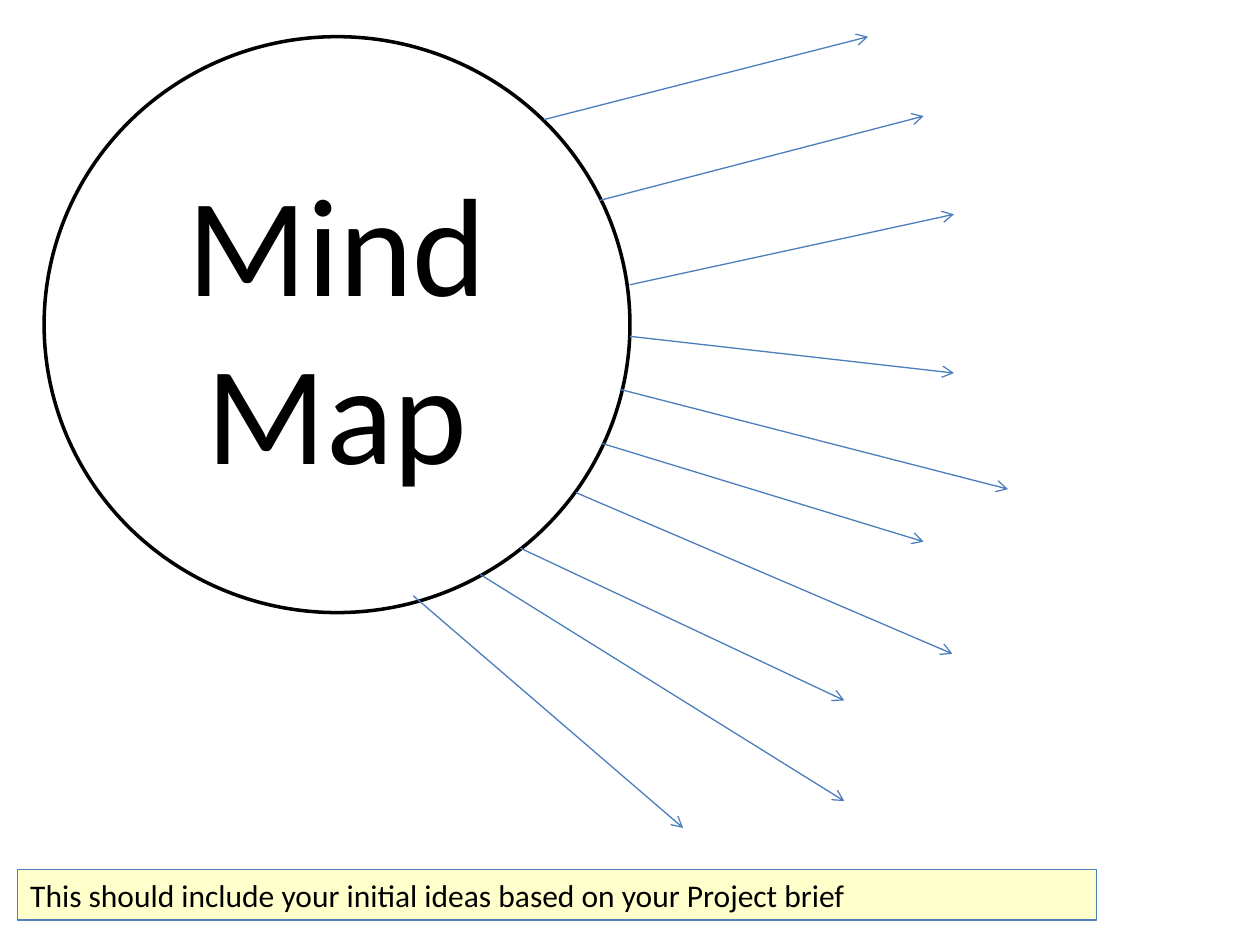
from dataclasses import dataclass
from typing import NamedTuple

from lxml.etree import SubElement
from pptx import Presentation
from pptx.dml.color import RGBColor
from pptx.enum.shapes import MSO_CONNECTOR, MSO_SHAPE
from pptx.enum.text import MSO_ANCHOR, MSO_AUTO_SIZE, PP_ALIGN
from pptx.oxml.ns import qn
from pptx.shapes.autoshape import Shape
from pptx.slide import Slide
from pptx.util import Cm, Pt


@dataclass(frozen=True)
class Theme:
    font: str = "Calibri"
    ink: RGBColor = RGBColor(0x00, 0x00, 0x00)
    paper: RGBColor = RGBColor(0xFF, 0xFF, 0xFF)
    ray: RGBColor = RGBColor(0x4B, 0x7E, 0xBC)
    note_fill: RGBColor = RGBColor(0xFF, 0xFF, 0xCC)
    note_border: RGBColor = RGBColor(0x4F, 0x81, 0xBD)
    topic_size: float = 80
    note_size: float = 18
    thick: float = 2
    thin: float = 0.75


class Ray(NamedTuple):
    x1: float
    y1: float
    x2: float
    y2: float


@dataclass(frozen=True)
class Panel:
    kind: MSO_SHAPE
    left: float
    top: float
    width: float
    height: float
    text: str
    size: float
    fill: RGBColor
    border: RGBColor
    border_width: float
    align: PP_ALIGN


THEME = Theme()

TOPIC = Panel(MSO_SHAPE.OVAL, 0.89, 0.74, 11.81, 11.61, "Mind Map",
              THEME.topic_size, THEME.paper, THEME.ink, THEME.thick, PP_ALIGN.CENTER)
NOTE = Panel(MSO_SHAPE.RECTANGLE, 0.36, 17.53, 21.74, 1.02,
             "This should include your initial ideas based on your Project brief",
             THEME.note_size, THEME.note_fill, THEME.note_border, THEME.thin, PP_ALIGN.LEFT)

RAYS = [
    Ray(10.97, 2.41, 17.5, 0.74),
    Ray(12.09, 4.04, 18.62, 2.34),
    Ray(12.7, 5.74, 19.23, 4.32),
    Ray(12.7, 6.78, 19.23, 7.52),
    Ray(12.5, 7.85, 20.32, 9.86),
    Ray(12.14, 8.94, 18.62, 10.92),
    Ray(11.61, 9.93, 19.2, 13.18),
    Ray(10.49, 11.05, 17.02, 14.12),
    Ray(9.68, 11.58, 17.02, 16.15),
    Ray(8.33, 12.01, 13.77, 16.69),
]


def draw_panel(slide: Slide, panel: Panel) -> Shape:
    shape = slide.shapes.add_shape(panel.kind, Cm(panel.left), Cm(panel.top),
                                   Cm(panel.width), Cm(panel.height))
    shape.shadow.inherit = False
    shape.fill.solid()
    shape.fill.fore_color.rgb = panel.fill
    shape.line.color.rgb = panel.border
    shape.line.width = Pt(panel.border_width)
    frame = shape.text_frame
    frame.word_wrap = True
    frame.vertical_anchor = MSO_ANCHOR.MIDDLE
    paragraph = frame.paragraphs[0]
    paragraph.alignment = panel.align
    run = paragraph.add_run()
    run.text = panel.text
    run.font.name = THEME.font
    run.font.size = Pt(panel.size)
    run.font.color.rgb = THEME.ink
    return shape


def draw_ray(slide: Slide, ray: Ray) -> None:
    arrow = slide.shapes.add_connector(MSO_CONNECTOR.STRAIGHT, *map(Cm, ray))
    arrow.line.color.rgb = THEME.ray
    arrow.line.width = Pt(THEME.thin)
    SubElement(arrow.line._get_or_add_ln(), qn("a:tailEnd"), type="arrow")
    SubElement(arrow._element.spPr, qn("a:effectLst"))


def main() -> None:
    deck = Presentation()
    deck.slide_width, deck.slide_height = Cm(25.4), Cm(19.05)
    slide = deck.slides.add_slide(deck.slide_layouts[6])
    draw_panel(slide, TOPIC)
    for ray in RAYS:
        draw_ray(slide, ray)
    note = draw_panel(slide, NOTE)
    note.text_frame.auto_size = MSO_AUTO_SIZE.SHAPE_TO_FIT_TEXT
    note.text_frame.vertical_anchor = MSO_ANCHOR.TOP
    deck.save("out.pptx")


if __name__ == "__main__":
    main()
